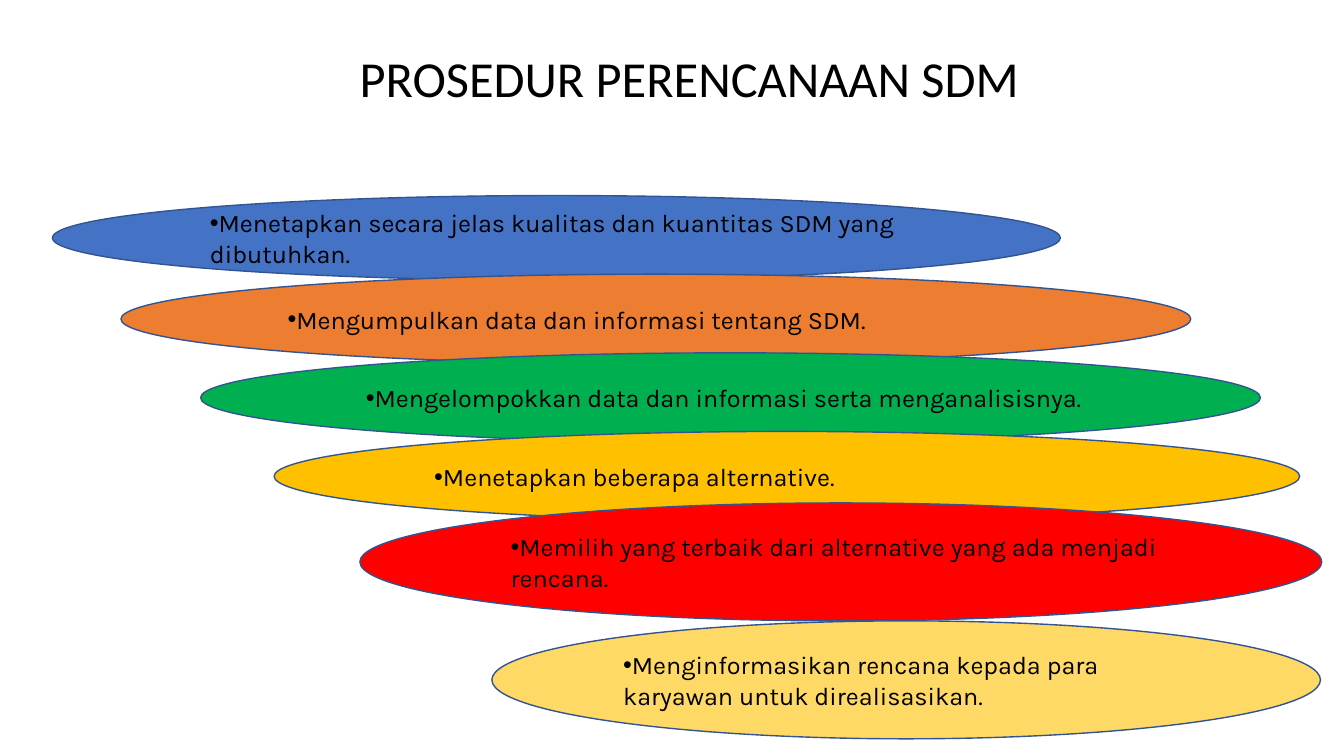
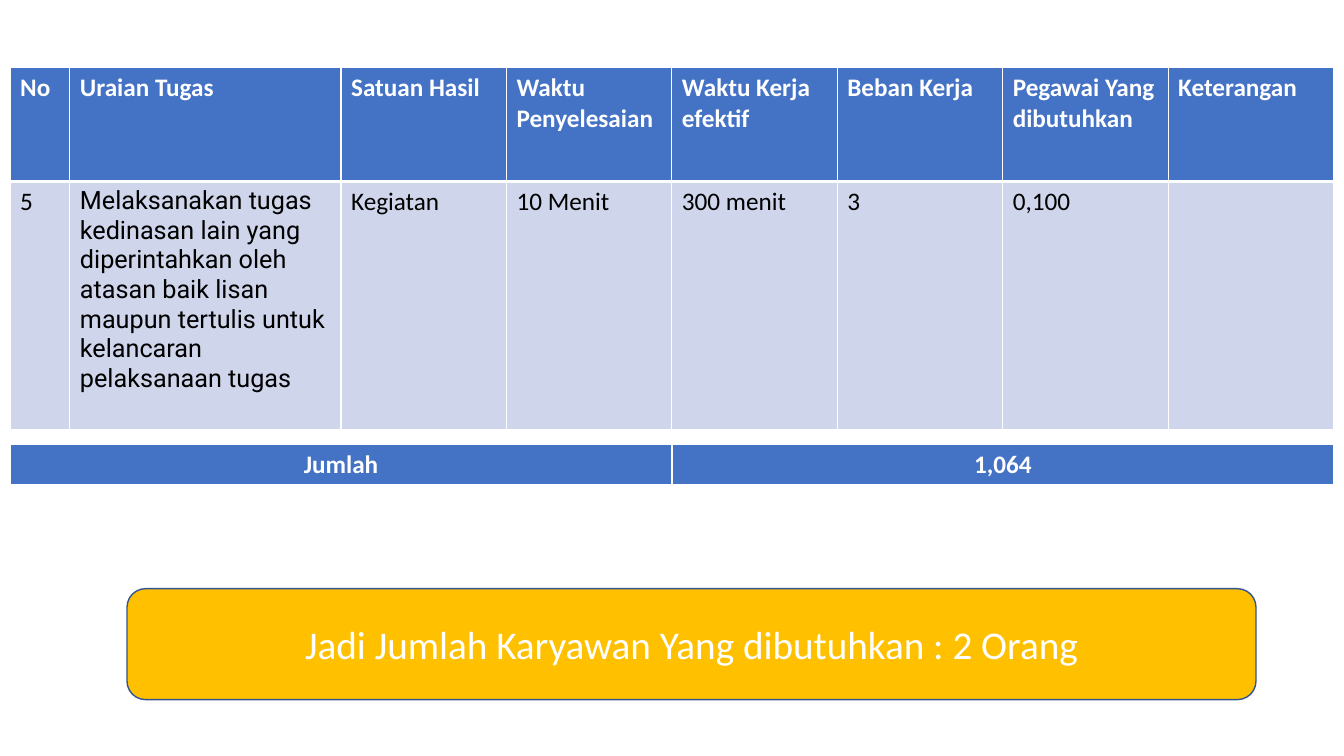
from lxml.etree import SubElement
from pptx import Presentation
from pptx.dml.color import RGBColor
from pptx.enum.shapes import MSO_SHAPE as Shape
from pptx.enum.text import MSO_ANCHOR as Anchor, PP_ALIGN as Align
from pptx.oxml.ns import qn
from pptx.util import Inches, Pt

HUES = {
    "black": "000000", "white": "FFFFFF", "edge": "325491",
    "blue": "4472C4", "orange": "ED7D31", "green": "00B050",
    "gold": "FFC000", "red": "FF0000", "sand": "FFD966", "pale": "CFD5EA",
}
MAIN, STEP, TASK = "Calibri", "Karla", "Roboto"
TITLE_ONLY, BLANK = 5, 6


def hue(name):
    return RGBColor.from_string(HUES[name])


class Deck:
    """Holds the style and the current slide; lengths are percent of its size."""

    def __init__(self):
        self.prs = Presentation()
        self.prs.slide_width = Inches(13.33)
        self.prs.slide_height = Inches(7.5)

    def across(self, share):
        return round(self.prs.slide_width * share / 100)

    def down(self, share):
        return round(self.prs.slide_height * share / 100)

    def box(self, x, y, w, h):
        return self.across(x), self.down(y), self.across(w), self.down(h)

    def new(self, layout):
        self.slide = self.prs.slides.add_slide(self.prs.slide_layouts[layout])

    def label(self, frame, text, size=18, face=MAIN, color="black",
              bold=False, align=Align.LEFT):
        """Fill the frame with one styled paragraph and return it."""
        frame.text = text
        para = frame.paragraphs[0]
        para.alignment = align
        font = para.font
        font.size, font.name, font.bold = Pt(size), face, bold
        font.color.rgb = hue(color)
        return para

    def title(self, text, *area):
        head = self.slide.shapes.title
        head.left, head.top, head.width, head.height = self.box(*area)
        head.text_frame.vertical_anchor = Anchor.BOTTOM
        para = self.label(head.text_frame, text, size=36, align=Align.CENTER)
        para.line_spacing = 0.9

    def shape(self, kind, fill, text, area, **style):
        """Add an outlined shape and return its paragraph."""
        item = self.slide.shapes.add_shape(kind, *self.box(*area))
        item.shadow.inherit = False
        item.fill.solid()
        item.fill.fore_color.rgb = hue(fill)
        item.line.color.rgb = hue("edge")
        item.line.width = Pt(1)
        item.text_frame.vertical_anchor = Anchor.MIDDLE
        return self.label(item.text_frame, text, **style)

    def oval(self, fill, text, area):
        para = self.shape(Shape.OVAL, fill, text, area, face=STEP)
        props = para._p.get_or_add_pPr()
        props.set("marL", "0")
        props.set("indent", "0")
        bullet = SubElement(props, qn("a:buChar"), char="•")
        bullet.addprevious(props.makeelement(qn("a:buFont"), typeface="Arial"))
        props.append(props.find(qn("a:defRPr")))

    def edges(self, cell, top, base):
        """Draw white cell borders with the given top and base widths."""
        props = cell._tc.get_or_add_tcPr()
        for side, width in zip("LRTB", (1, 1, top, base)):
            line = SubElement(props, qn("a:ln" + side), w=str(int(Pt(width))))
            fill = SubElement(line, qn("a:solidFill"))
            SubElement(fill, qn("a:srgbClr"), val=HUES["white"])

    def table(self, x, y, cols, highs, rows, align=Align.LEFT, faces=None):
        """Add a table with a blue head; faces maps (row, column) to a font."""
        area = self.box(x, y, sum(cols), sum(highs))
        grid = self.slide.shapes.add_table(len(rows), len(cols), *area).table
        for col, wide in zip(grid.columns, cols):
            col.width = self.across(wide)
        for r, (high, texts) in enumerate(zip(highs, rows)):
            grid.rows[r].height = self.down(high)
            head = r == 0
            for c, text in enumerate(texts):
                cell = grid.cell(r, c)
                self.edges(cell, 3 if r == 1 else 1, 3 if head else 1)
                cell.fill.solid()
                cell.fill.fore_color.rgb = hue("blue" if head else "pale")
                self.label(cell.text_frame, text, bold=head, align=align,
                           face=(faces or {}).get((r, c), MAIN),
                           color="white" if head else "black")


STEPS = [
    ("blue", "Menetapkan secara jelas kualitas dan kuantitas SDM yang dibutuhkan.",
     (3.9, 25.87, 75, 11.2)),
    ("orange", "Mengumpulkan data dan informasi tentang SDM.",
     (9, 36.27, 79.6, 11.87)),
    ("green", "Mengelompokkan data dan informasi serta menganalisisnya.",
     (14.93, 46.67, 78.85, 11.87)),
    ("gold", "Menetapkan beberapa alternative.",
     (20.4, 57.07, 76.3, 11.87)),
    ("red", "Memilih yang terbaik dari alternative yang ada menjadi rencana.",
     (26.78, 66.53, 71.57, 15.6)),
    ("sand", "Menginformasikan rencana kepada para karyawan untuk direalisasikan.",
     (36.6, 82.13, 61.65, 15.6)),
]
LOADS = [
    ["No", "Uraian Tugas", "Satuan Hasil", "Waktu Penyelesaian",
     "Waktu Kerja efektif", "Beban Kerja", "Pegawai Yang dibutuhkan",
     "Keterangan"],
    ["5", "Melaksanakan tugas kedinasan lain yang diperintahkan oleh atasan "
     "baik lisan maupun tertulis untuk kelancaran pelaksanaan tugas",
     "Kegiatan", "10 Menit", "300 menit", "3", "0,100", ""],
]


def main():
    deck = Deck()

    deck.new(TITLE_ONLY)
    deck.title("PROSEDUR PERENCANAAN SDM", 13.8, 2.67, 75, 12.4)
    for step in STEPS:
        deck.oval(*step)

    deck.new(BLANK)
    deck.table(0.75, 8.93, [4.45, 20.18] + [12.31] * 6, [15.07, 32.8],
               LOADS, faces={(1, 1): TASK})
    deck.table(0.75, 58.8, [49.25] * 2, [5.47], [["Jumlah", "1,064"]],
               align=Align.CENTER)
    deck.shape(Shape.ROUNDED_RECTANGLE, "gold",
               "Jadi Jumlah Karyawan Yang dibutuhkan : 2 Orang",
               (9.45, 77.87, 84, 14.67), size=28, color="white",
               align=Align.CENTER)

    deck.prs.save("out.pptx")


if __name__ == "__main__":
    main()
